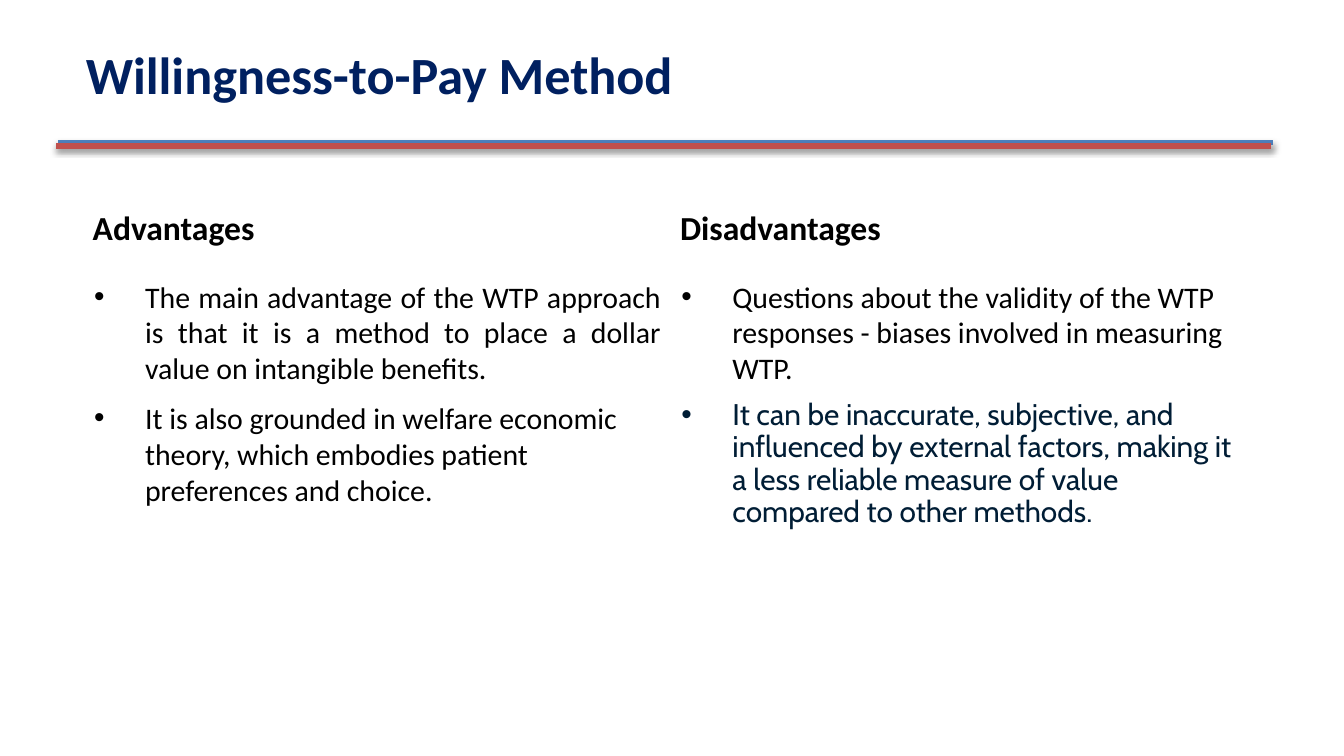
from lxml import etree
from pptx import Presentation
from pptx import util as u
from pptx.dml.color import RGBColor
from pptx.enum import shapes, text
from pptx.oxml.ns import qn

NAVY = RGBColor(0x00, 0x20, 0x60)
INK = RGBColor(0x00, 0x1D, 0x35)
BLACK = RGBColor(0x00, 0x00, 0x00)
BLUE = RGBColor(0x4F, 0x81, 0xBD)
RED = RGBColor(0xC0, 0x50, 0x4D)

TITLE = {"size": u.Pt(28), "bold": True, "color": NAVY}
HEADING = {"size": u.Pt(18), "bold": True}
BODY = {"size": u.Pt(16)}
CABIN = {"size": u.Pt(16), "name": "Cabin", "color": INK}

JUSTIFY = {"alignment": text.PP_ALIGN.JUSTIFY}
SPACED = {"space_before": u.Pt(7.6)}
TIGHT = {"line_spacing": 0.9}

FITTED = {"margin_left": 0, "margin_top": 0, "margin_right": 0, "margin_bottom": 0,
          "auto_size": text.MSO_AUTO_SIZE.SHAPE_TO_FIT_TEXT}
LOW = {**FITTED, "vertical_anchor": text.MSO_ANCHOR.BOTTOM}
HIGH = {**FITTED, "vertical_anchor": text.MSO_ANCHOR.TOP}
MIDDLE = {"vertical_anchor": text.MSO_ANCHOR.MIDDLE}

COLUMNS = [
    (6.9, 42.3, 35.56, "Advantages", [
        ("The main advantage of the WTP approach is that it is a method to place "
         "a dollar value on intangible benefits.", BODY, JUSTIFY),
        ("It is also grounded in welfare economic theory, which embodies patient "
         "preferences and choice.", BODY, SPACED),
    ]),
    (50.6, 42.5, 33.6, "Disadvantages", [
        ("Questions about the validity of the WTP responses - biases involved in "
         "measuring WTP.", BODY, {}),
        ("It can be inaccurate, subjective, and influenced by external factors, "
         "making it a less reliable measure of value compared to other methods.",
         CABIN, {**SPACED, **TIGHT}),
    ]),
]


class Deck:
    """Hold the style and current slide; lengths are percentages of the slide's size."""

    def __init__(self, width, height):
        self.prs = Presentation()
        self.prs.slide_width, self.prs.slide_height = u.Inches(width), u.Inches(height)
        self.s = self.prs.slides.add_slide(self.prs.slide_layouts[6])
        self.font = {"name": "Calibri", "color": BLACK}

    def x(self, share):
        return round(self.prs.slide_width * share / 100)

    def y(self, share):
        return round(self.prs.slide_height * share / 100)

    def text(self, box, paragraphs, frame, bullets=False):
        left, top, width, height = box
        sp = self.s.shapes.add_textbox(self.x(left), self.y(top), self.x(width), self.y(height))
        tf = sp.text_frame
        for key, value in {"word_wrap": True, **frame}.items():
            setattr(tf, key, value)
        for i, (words, font, layout) in enumerate(paragraphs):
            p = tf.paragraphs[0] if i == 0 else tf.add_paragraph()
            for key, value in layout.items():
                setattr(p, key, value)
            if bullets:
                self.bullet(p)
            r = p.add_run()
            r.text = words
            for key, value in {**self.font, **font}.items():
                if key == "color":
                    r.font.color.rgb = value
                else:
                    setattr(r.font, key, value)

    def bullet(self, p):
        pPr = p._p.get_or_add_pPr()
        pPr.set("marL", str(u.Inches(0.39)))
        pPr.set("indent", str(u.Inches(-0.38)))
        etree.SubElement(pPr, qn("a:buFont"), typeface="Arial")
        etree.SubElement(pPr, qn("a:buChar"), char="•")

    def rule(self, left, top, width, color):
        sp = self.s.shapes.add_connector(
            shapes.MSO_CONNECTOR.STRAIGHT,
            self.x(left), self.y(top), self.x(left + width), self.y(top))
        sp.line.color.rgb, sp.line.width = color, u.Pt(3)
        effects = etree.SubElement(sp._element.spPr, qn("a:effectLst"))
        shadow = etree.SubElement(
            effects, qn("a:outerShdw"), blurRad=str(u.Pt(3.1)), dist=str(u.Pt(1.8)),
            dir="5400000", rotWithShape="0")
        tint = etree.SubElement(shadow, qn("a:srgbClr"), val=str(BLACK))
        etree.SubElement(tint, qn("a:alpha"), val="35000")


def main():
    deck = Deck(10, 10 * 9 / 16)
    for left, width, height, heading, points in COLUMNS:
        deck.text((left, 27.38, width, 5.33), [(heading, HEADING, {})], LOW)
        deck.text((left, 36.8, width, height), points, HIGH, bullets=True)
    deck.rule(4.3, 18.84, 90.4, BLUE)
    deck.rule(4.2, 19.3, 90.4, RED)
    deck.text((5.4, 6.04, 88.3, 8.36), [("Willingness-to-Pay Method", TITLE, TIGHT)], MIDDLE)
    deck.prs.save("out.pptx")


if __name__ == "__main__":
    main()
